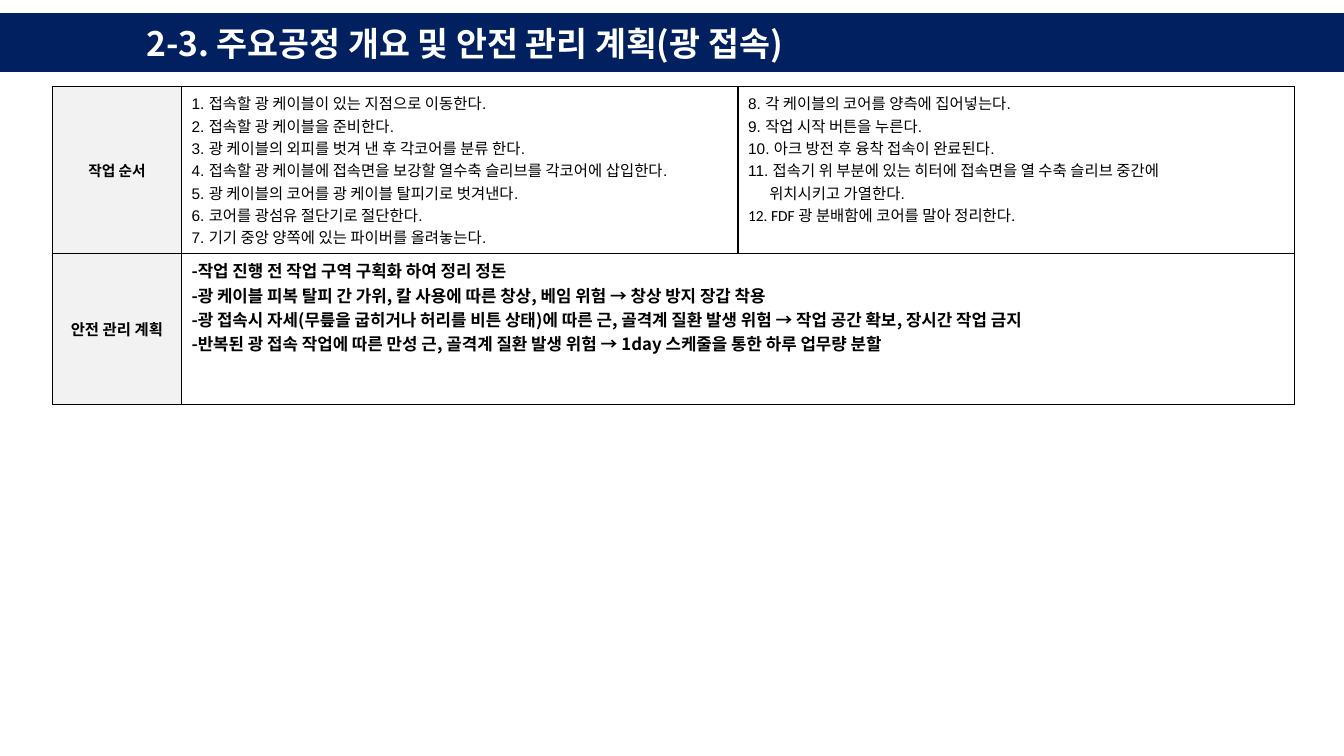
from dataclasses import dataclass

from lxml.etree import SubElement
from pptx import Presentation
from pptx.dml.color import RGBColor as RGB
from pptx.enum.shapes import MSO_SHAPE
from pptx.enum.text import MSO_ANCHOR as ANCHOR, MSO_AUTO_SIZE, PP_ALIGN as ALIGN
from pptx.oxml.ns import qn
from pptx.util import Inches, Pt

TITLE = "2-3. 주요공정 개요 및 안전 관리 계획(광 접속)"
ORDER_LABEL = "작업 순서"
FIRST_STEPS = [
    "1. 접속할 광 케이블이 있는 지점으로 이동한다.",
    "2. 접속할 광 케이블을 준비한다.",
    "3. 광 케이블의 외피를 벗겨 낸 후 각코어를 분류 한다.",
    "4. 접속할 광 케이블에 접속면을 보강할 열수축 슬리브를 각코어에 삽입한다.",
    "5. 광 케이블의 코어를 광 케이블 탈피기로 벗겨낸다.",
    "6. 코어를 광섬유 절단기로 절단한다.",
    "7. 기기 중앙 양쪽에 있는 파이버를 올려놓는다.",
]
LATER_STEPS = [
    "8. 각 케이블의 코어를 양측에 집어넣는다.",
    "9. 작업 시작 버튼을 누른다.",
    "10. 아크 방전 후 융착 접속이 완료된다.",
    "11. 접속기 위 부분에 있는 히터에 접속면을 열 수축 슬리브 중간에",
]
STEP_CONTINUATION = "위치시키고 가열한다."
LAST_STEP = "12. FDF 광 분배함에 코어를 말아 정리한다."
SAFETY_LABEL = "안전 관리 계획"
SAFETY_PLAN = [
    "-작업 진행 전 작업 구역 구획화 하여 정리 정돈",
    "-광 케이블 피복 탈피 간 가위, 칼 사용에 따른 창상, 베임 위험 → 창상 방지 장갑 착용",
    "-광 접속시 자세(무릎을 굽히거나 허리를 비튼 상태)에 따른 근, 골격계 질환 발생 위험 → 작업 공간 확보, 장시간 작업 금지",
    "-반복된 광 접속 작업에 따른 만성 근, 골격계 질환 발생 위험 → 1day 스케줄을 통한 하루 업무량 분할",
]


@dataclass(frozen=True)
class Theme:
    navy: RGB = RGB(0x00, 0x20, 0x60)
    white: RGB = RGB(0xFF, 0xFF, 0xFF)
    black: RGB = RGB(0x00, 0x00, 0x00)
    label_fill: RGB = RGB(0xF2, 0xF2, 0xF2)
    korean: str = "Noto Sans CJK KR"
    label_font: str = "Calibri"
    step_font: str = "Arial"
    title_size: float = 24
    order_label_size: float = 10.5
    step_size: float = 11
    safety_size: float = 12
    border_width: float = 1


THEME = Theme()
SLIDE_WIDTH, SLIDE_HEIGHT = 13.33, 7.5
BAND_TOP, BAND_HEIGHT = 0.14, 0.57
TITLE_LEFT, TITLE_WIDTH = 1.35, 10.63
TABLE_LEFT, TABLE_TOP = 0.52, 0.86
COLUMN_WIDTHS = (1.28, 5.52, 5.52)
ROW_HEIGHT = 1.5
CONTINUATION_INDENT = 0.21


def write(frame, lines, *, size, font=THEME.step_font, color=THEME.black,
          bold=False, align=ALIGN.LEFT, indent=0):
    """Append lines to a text frame, using its first paragraph while it is empty."""
    for line in lines:
        paragraph = frame.paragraphs[-1]
        if paragraph.runs:
            paragraph = frame.add_paragraph()
        paragraph.alignment = align
        if indent:
            paragraph._p.get_or_add_pPr().set("marL", str(Inches(indent)))
        run = paragraph.add_run()
        run.text = line
        run.font.size, run.font.name, run.font.bold = Pt(size), font, bold
        run.font.color.rgb = color
        SubElement(run._r.get_or_add_rPr(), qn("a:ea"), typeface=THEME.korean)


def style_cell(cell, fill):
    properties = cell._tc.get_or_add_tcPr()
    for side in ("lnL", "lnR", "lnT", "lnB"):
        border = SubElement(properties, qn(f"a:{side}"), w=str(Pt(THEME.border_width)))
        solid = SubElement(border, qn("a:solidFill"))
        SubElement(solid, qn("a:srgbClr"), val=str(THEME.black))
    cell.fill.solid()
    cell.fill.fore_color.rgb = fill


def add_heading(slide):
    band = slide.shapes.add_shape(MSO_SHAPE.RECTANGLE, 0, Inches(BAND_TOP),
                                  Inches(SLIDE_WIDTH), Inches(BAND_HEIGHT))
    band.shadow.inherit = False
    band.fill.solid()
    band.fill.fore_color.rgb = band.line.color.rgb = THEME.navy
    band.line.width = Pt(1)

    title = slide.shapes.title
    title._element.addprevious(band._element)
    title.left, title.top = Inches(TITLE_LEFT), Inches(BAND_TOP)
    title.width, title.height = Inches(TITLE_WIDTH), Inches(BAND_HEIGHT)
    frame = title.text_frame
    frame.word_wrap, frame.auto_size = True, MSO_AUTO_SIZE.NONE
    frame.vertical_anchor = ANCHOR.MIDDLE
    write(frame, [TITLE], size=THEME.title_size, font=THEME.korean,
          color=THEME.white, bold=True)


def add_plan_table(slide):
    table = slide.shapes.add_table(2, 3, Inches(TABLE_LEFT), Inches(TABLE_TOP),
                                   Inches(sum(COLUMN_WIDTHS)), Inches(2 * ROW_HEIGHT)).table
    table.first_row = table.horz_banding = False
    for column, width in zip(table.columns, COLUMN_WIDTHS):
        column.width = Inches(width)
    for row in table.rows:
        row.height = Inches(ROW_HEIGHT)
        for index, cell in enumerate(row.cells):
            style_cell(cell, THEME.white if index else THEME.label_fill)
    table.cell(1, 1).merge(table.cell(1, 2))

    labels = ((ORDER_LABEL, THEME.order_label_size), (SAFETY_LABEL, THEME.step_size))
    for row_index, (label, size) in enumerate(labels):
        cell = table.cell(row_index, 0)
        cell.vertical_anchor = ANCHOR.MIDDLE
        write(cell.text_frame, [label], size=size, font=THEME.label_font,
              bold=True, align=ALIGN.CENTER)

    write(table.cell(0, 1).text_frame, FIRST_STEPS, size=THEME.step_size)
    later = table.cell(0, 2).text_frame
    write(later, LATER_STEPS, size=THEME.step_size)
    write(later, [STEP_CONTINUATION], size=THEME.step_size, indent=CONTINUATION_INDENT)
    write(later, [LAST_STEP], size=THEME.step_size, font=THEME.label_font)
    write(table.cell(1, 1).text_frame, SAFETY_PLAN, size=THEME.safety_size,
          font=THEME.korean, bold=True)


def main():
    deck = Presentation()
    deck.slide_width, deck.slide_height = Inches(SLIDE_WIDTH), Inches(SLIDE_HEIGHT)
    slide = deck.slides.add_slide(deck.slide_layouts.get_by_name("Title Only"))
    add_heading(slide)
    add_plan_table(slide)
    deck.save("out.pptx")


if __name__ == "__main__":
    main()
